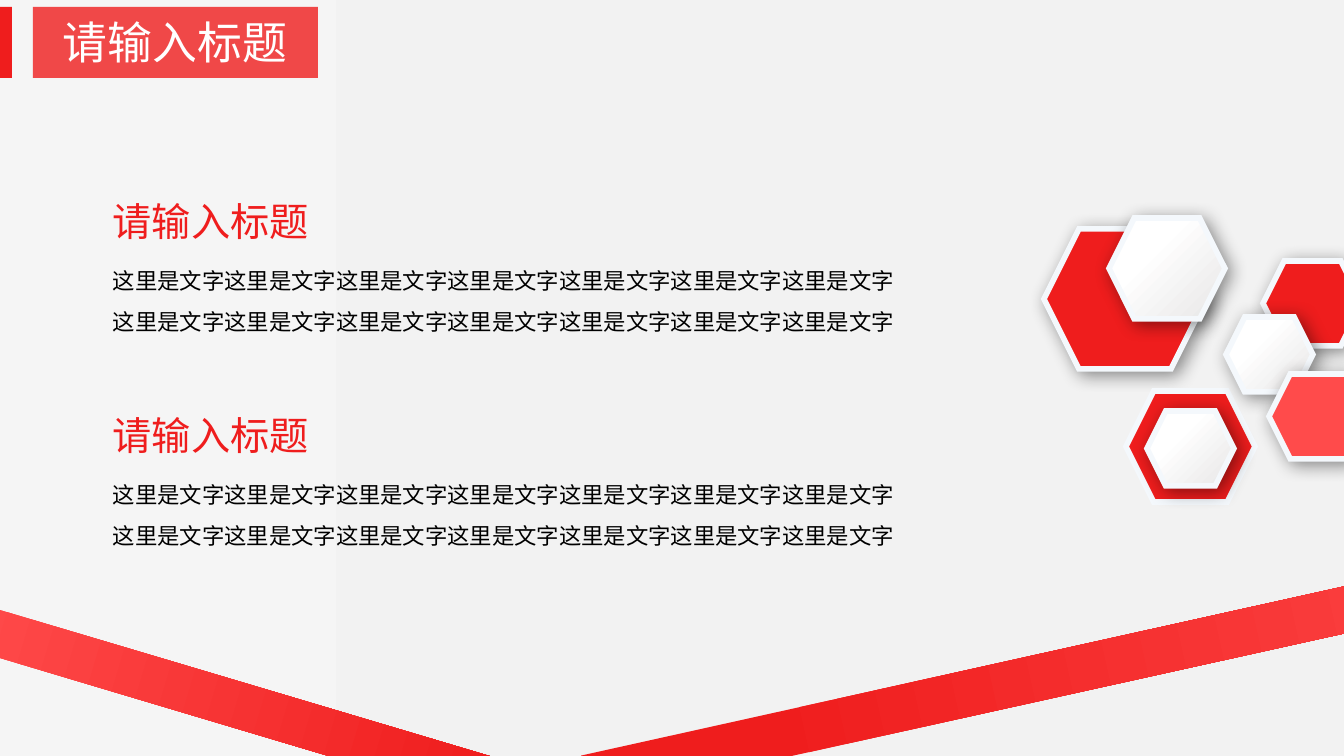
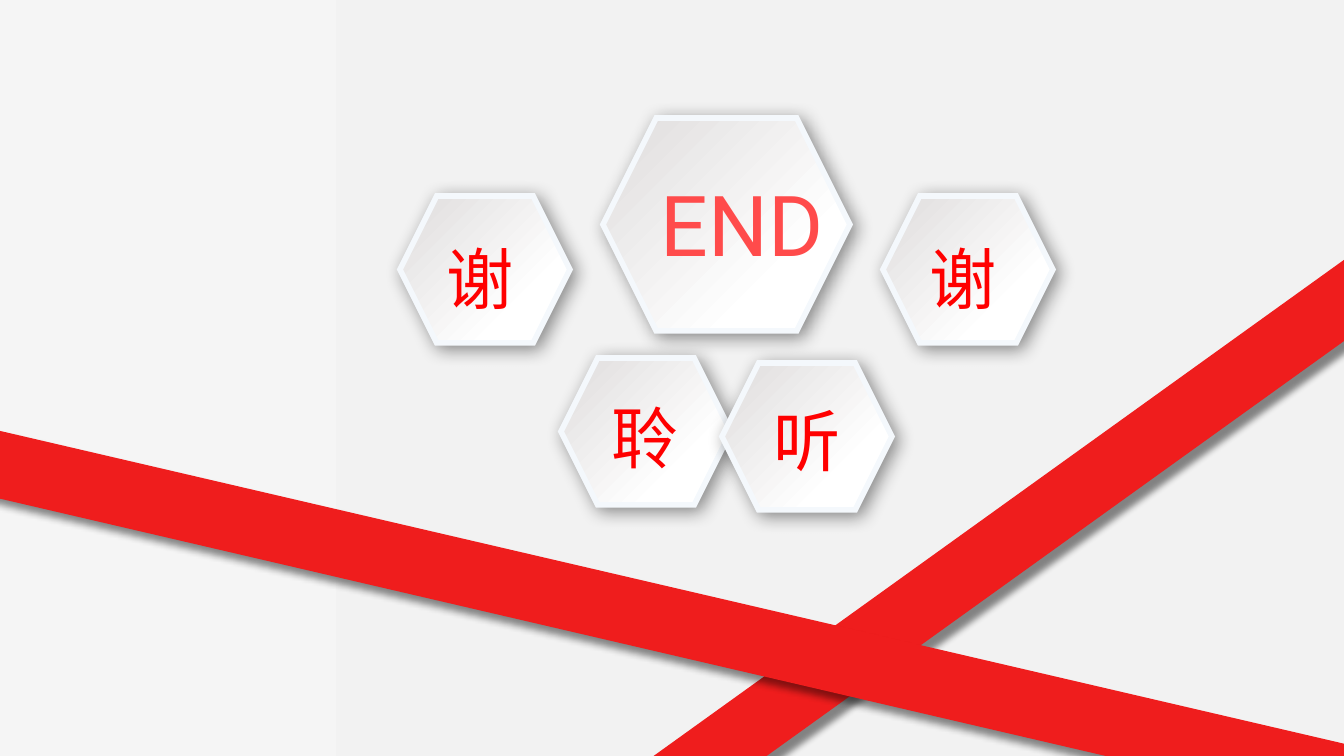
"""Build a two-slide red and grey hexagon deck: a text page and a closing page."""
from lxml.etree import SubElement
from pptx import Presentation
from pptx.dml.color import RGBColor
from pptx.enum.shapes import MSO_SHAPE
from pptx.enum.text import MSO_AUTO_SIZE, PP_ALIGN
from pptx.oxml.ns import qn
from pptx.util import Emu, Pt

SCALE = 914400 / 100.8
COLOURS = {
    "red": "EF1D1D", "coral": "FF4B4B", "pure red": "FF0000", "white": "FFFFFF",
    "black": "000000", "rim": "F4F8FC", "silver": "E7E6E6", "grey": "E3E1E1",
    "paper light": "F5F5F5", "paper": "F2F2F2",
}
RGB = {name: RGBColor.from_string(value) for name, value in COLOURS.items()}
GRADIENTS = {
    "page": (0, (0, "paper light"), (0.5, "paper")),
    "pearl": (315, (0.34, "white"), (1, "silver")),
    "mist": (315, (0.09, "grey"), (0.73, "white")),
    "left band": (0, (0, "coral"), (1, "red")),
    "right band": (0, (0.18, "red"), (1, "coral")),
}
SHADOWS = {"soft": (43, 13, 4), "band": (46, 5, 8)}
CHINESE, LATIN = "Noto Sans CJK SC", "Roboto"
FORMATS = {
    "title": ({"name": CHINESE, "size": Pt(32)}, "white", {"alignment": PP_ALIGN.CENTER}),
    "heading": ({"name": CHINESE, "size": Pt(28)}, "red", {}),
    "body": ({"name": CHINESE, "size": Pt(16)}, "black", {"line_spacing": 1.5}),
    "thanks": ({"name": CHINESE, "size": Pt(48)}, "pure red", {}),
    "end": ({"name": LATIN, "size": Pt(60)}, "coral", {"alignment": PP_ALIGN.CENTER}),
}


def draw_shape(shapes, preset, frame, paint, shadow=None, turn=0, opacity=100):
    """Add a filled preset shape; hexagons get a pale rim."""
    shape = shapes.add_shape(preset, *(Emu(round(length * SCALE)) for length in frame))
    shape.rotation = turn
    shape.shadow.inherit = False
    if paint in GRADIENTS:
        angle, *stops = GRADIENTS[paint]
        shape.fill.gradient()
        shape.fill.gradient_angle = angle
        for stop, (position, colour) in zip(shape.fill.gradient_stops, stops):
            stop.position, stop.color.rgb = position, RGB[colour]
    else:
        shape.fill.solid()
        shape.fill.fore_color.rgb = RGB[paint]
    if opacity < 100:
        colour = shape._element.spPr.find(".//" + qn("a:srgbClr"))
        SubElement(colour, qn("a:alpha"), val=str(opacity * 1000))
    if preset == MSO_SHAPE.HEXAGON:
        shape.line.color.rgb = RGB["rim"]
        shape.line.width = Pt(4)
        SubElement(shape._element.spPr.find(qn("a:ln")), qn("a:miter"), lim="800000")
    else:
        shape.line.fill.background()
    if shadow:
        alpha, blur, distance = SHADOWS[shadow]
        effects = shape._element.spPr.find(qn("a:effectLst"))
        outer = SubElement(effects, qn("a:outerShdw"), blurRad=str(Pt(blur)),
                           dist=str(Pt(distance)), dir="2700000", algn="tl", rotWithShape="0")
        colour = SubElement(outer, qn("a:srgbClr"), val=COLOURS["black"])
        SubElement(colour, qn("a:alpha"), val=str(alpha * 1000))


def write_text(shapes, frame, text, style, wrap=True):
    """Add a text box with one paragraph in a named style."""
    box = shapes.add_textbox(*(Emu(round(length * SCALE)) for length in frame))
    box.text_frame.word_wrap = wrap
    box.text_frame.auto_size = MSO_AUTO_SIZE.SHAPE_TO_FIT_TEXT
    para = box.text_frame.paragraphs[0]
    span = para.add_run()
    span.text = text
    font_values, colour, para_values = FORMATS[style]
    for target, values in ((span.font, font_values), (para, para_values)):
        for name, value in values.items():
            setattr(target, name, value)
    span.font.color.rgb = RGB[colour]
    SubElement(span._r.get_or_add_rPr(), qn("a:ea"), typeface=font_values["name"])


deck = Presentation()
deck.slide_width, deck.slide_height = (Emu(round(length * SCALE)) for length in (1344, 756))
pages = [deck.slides.add_slide(deck.slide_layouts[6]) for _ in range(2)]
for page in pages:
    backdrop = page.background.fill
    backdrop.gradient()
    angle, *stops = GRADIENTS["page"]
    backdrop.gradient_angle = angle
    for stop, (position, colour) in zip(backdrop.gradient_stops, stops):
        stop.position, stop.color.rgb = position, RGB[colour]
content, closing = (page.shapes for page in pages)

for top in (192, 406):
    write_text(content, (103, top, 317, 57), "请输入标题", "heading")
    write_text(content, (103, top + 57, 813, 91), "这里是文字" * 14, "body")

draw_shape(content, MSO_SHAPE.RECTANGLE, (33, 7, 285, 71), "red", opacity=80)
write_text(content, (43, 10, 264, 64), "请输入标题", "title", wrap=False)
draw_shape(content, MSO_SHAPE.RECTANGLE, (-12, 7, 24, 71), "red")

for frame, paint, shadow in (
    ((1044, 229, 162, 140), "red", "soft"),
    ((1109, 218, 116, 101), "pearl", "soft"),
    ((1263, 261, 99, 85), "red", "soft"),
    ((1126, 391, 129, 111), "red", None),
    ((1226, 317, 87, 75), "pearl", "soft"),
    ((1269, 374, 99, 85), "coral", "soft"),
    ((1147, 411, 87, 75), "pearl", "soft"),
):
    draw_shape(content, MSO_SHAPE.HEXAGON, frame, paint, shadow)

for shapes, frame, paint, shadow, turn in (
    (content, (-46, 678, 541, 46), "left band", None, 16.6),
    (content, (573, 640, 1064, 46), "right band", None, 347.5),
    (closing, (589, 501, 860, 66), "red", "band", 324.3),
    (closing, (-29, 587, 1392, 66), "red", "band", 13.1),
):
    draw_shape(shapes, MSO_SHAPE.RECTANGLE, frame, paint, shadow, turn)

for character, left, top, text_left, text_top in (
    ("谢", 400, 196, 437, 232),
    ("谢", 883, 196, 920, 232),
    ("聆", 561, 358, 602, 391),
    ("听", 722, 363, 764, 394),
):
    badge = closing.add_group_shape().shapes
    draw_shape(badge, MSO_SHAPE.HEXAGON, (left, top, 170, 147), "mist", "soft")
    write_text(badge, (text_left, text_top, 60, 91), character, "thanks")

draw_shape(closing, MSO_SHAPE.HEXAGON, (603, 118, 247, 213), "mist", "soft")
write_text(closing, (632, 168, 220, 111), "END", "end")

deck.save("out.pptx")
